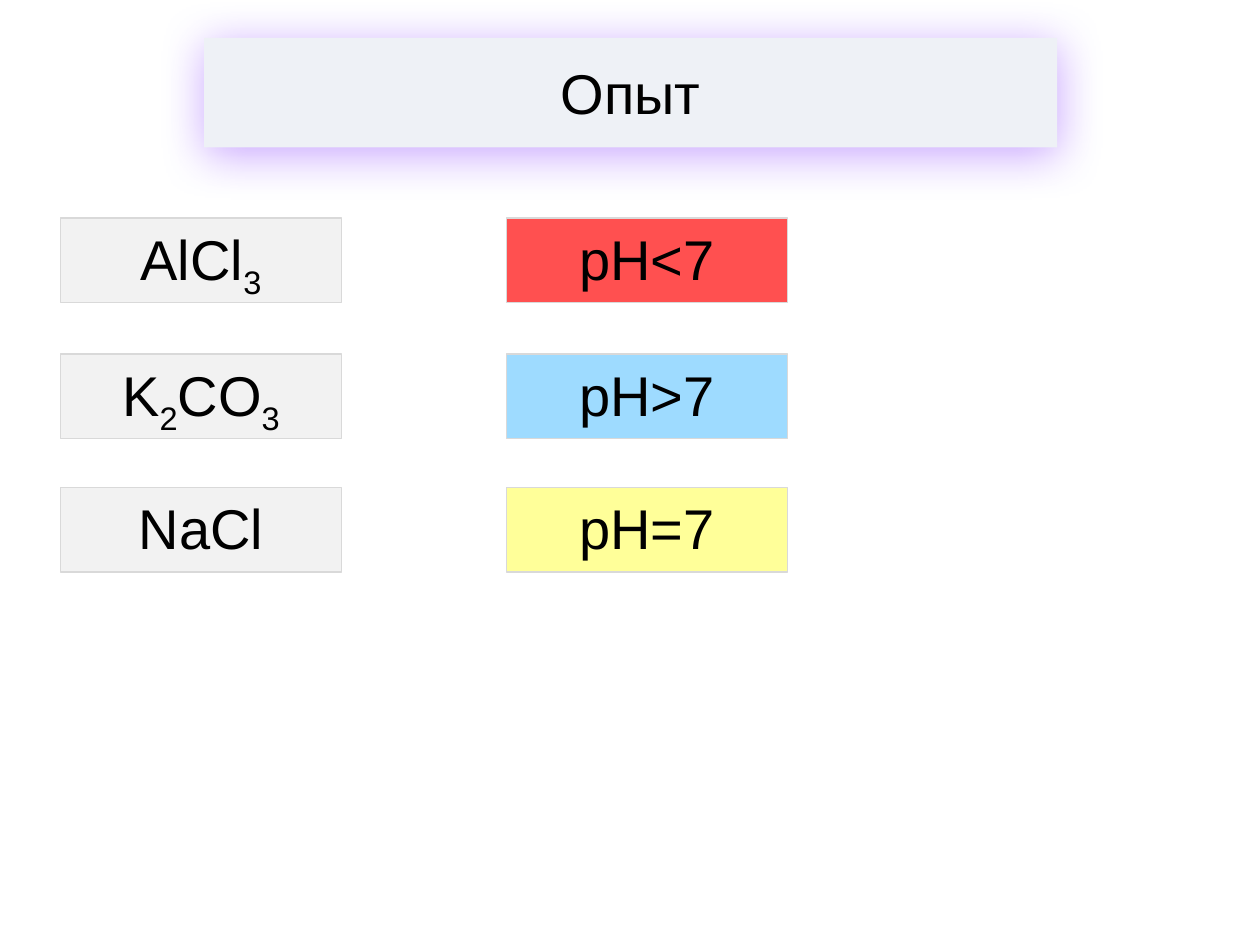
from dataclasses import dataclass

from lxml.etree import SubElement
from pptx import Presentation
from pptx.dml.color import RGBColor
from pptx.enum.shapes import MSO_SHAPE as Shape
from pptx.enum.text import MSO_ANCHOR as Anchor, PP_ALIGN as Align
from pptx.oxml.ns import qn
from pptx.util import Inches, Pt


@dataclass(frozen=True)
class Theme:
    font: str = "Arial"
    size: int = 32
    text: str = "000000"
    title_fill: str = "EEF1F6"
    glow: str = "6600FF"
    salt: str = "F2F2F2"
    border: str = "D9D9D9"
    acid: str = "FF5050"
    alkaline: str = "9EDBFF"
    neutral: str = "FFFF99"


THEME = Theme()
CARD_WIDTH, CARD_HEIGHT = 2.23, 0.67
SALT_LEFT, PH_LEFT = 0.48, 4.02

# Top edge, formula as (text, is subscript) parts, acidity, fill
ROWS = [
    (1.73, [("AlCl", False), ("3", True)], "pH<7", THEME.acid),
    (2.81, [("K", False), ("2", True), ("CO", False), ("3", True)],
     "pH>7", THEME.alkaline),
    (3.87, [("NaCl", False)], "pH=7", THEME.neutral),
]


def apply_format(target, values):
    for name, value in values.items():
        setattr(target, name, value)


def paint(shape, color):
    shape.fill.solid()
    shape.fill.fore_color.rgb = RGBColor.from_string(color)


def write(shape, parts, anchor, space_before=0):
    """Write one centred line; parts flagged True become subscripts."""
    frame = shape.text_frame
    apply_format(frame, {"word_wrap": True, "vertical_anchor": anchor})
    line = frame.paragraphs[0]
    apply_format(line, {"alignment": Align.CENTER,
                        "space_before": Pt(space_before)})
    for text, is_subscript in parts:
        run = line.add_run()
        run.text = text
        apply_format(run.font, {"name": THEME.font, "size": Pt(THEME.size)})
        run.font.color.rgb = RGBColor.from_string(THEME.text)
        if is_subscript:
            run.font._element.set("baseline", "-25000")


def add_soft_shadow(shape):
    effects = SubElement(shape._element.spPr, qn("a:effectLst"))
    shadow = SubElement(effects, qn("a:outerShdw"), blurRad=str(Pt(27)),
                        dist=str(Pt(4)), dir="5400000", algn="ctr",
                        rotWithShape="0")
    color = SubElement(shadow, qn("a:srgbClr"), val=THEME.glow)
    SubElement(color, qn("a:alpha"), val="35000")


def set_title(slide, text):
    title = slide.shapes.title
    apply_format(title, {"left": Inches(1.62), "top": Inches(0.3),
                         "width": Inches(6.77), "height": Inches(0.87)})
    paint(title, THEME.title_fill)
    add_soft_shadow(title)
    write(title, [(text, False)], Anchor.MIDDLE)


def add_card(slide, left, top, parts, fill):
    card = slide.shapes.add_shape(Shape.RECTANGLE, Inches(left), Inches(top),
                                  Inches(CARD_WIDTH), Inches(CARD_HEIGHT))
    card.shadow.inherit = False
    paint(card, fill)
    card.line.color.rgb = RGBColor.from_string(THEME.border)
    card.line.width = Pt(0.75)
    write(card, parts, Anchor.TOP, space_before=3.5)


def main():
    deck = Presentation()
    apply_format(deck, {"slide_width": Inches(10), "slide_height": Inches(7.5)})
    slide = deck.slides.add_slide(deck.slide_layouts[5])
    set_title(slide, "Опыт")

    # Each salt solution faces its acidity
    for top, formula, acidity, fill in ROWS:
        add_card(slide, SALT_LEFT, top, formula, THEME.salt)
        add_card(slide, PH_LEFT, top, [(acidity, False)], fill)

    deck.save("out.pptx")


if __name__ == "__main__":
    main()
